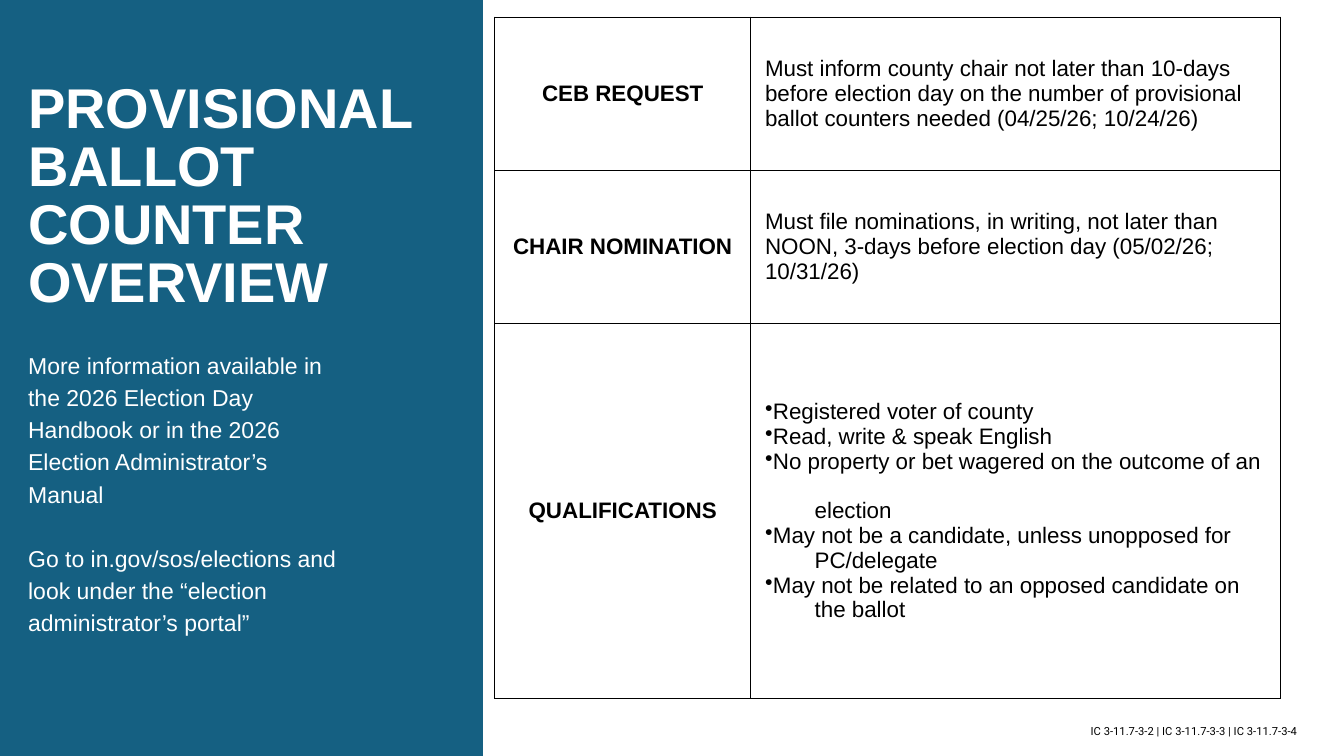
from lxml import etree
from pptx import Presentation
from pptx import util as u
from pptx.dml.color import RGBColor
from pptx.enum import shapes, text
from pptx.oxml.ns import qn

HUES = {"band": "156082", "light": "FFFFFF", "dark": "000000"}
LEFT, MID, RIGHT = text.PP_ALIGN.LEFT, text.PP_ALIGN.CENTER, text.PP_ALIGN.RIGHT

HEAD = {"size": u.Pt(40), "name": "Arial", "bold": True}
INFO = {"size": u.Pt(16.4), "name": "Arial"}
LABEL = {"size": u.Pt(16), "name": "Arial", "bold": True}
BODY = {"size": u.Pt(16), "name": "Arial", "bold": False}
CITE = {"size": u.Pt(8), "name": "Roboto"}

TITLE = ["PROVISIONAL", "BALLOT COUNTER OVERVIEW"]
NOTES = [
    "More information available in the 2026 Election Day Handbook or in the "
    "2026 Election Administrator’s Manual",
    "Go to in.gov/sos/elections and look under the “election administrator’s portal”",
]
# Each qualification: first line, then its indented second line and the gap above it
RULES = [
    ("Registered voter of county", None, 0),
    ("Read, write & speak English", None, 0),
    ("No property or bet wagered on the outcome of an", "election", 17.5),
    ("May not be a candidate, unless unopposed for", "PC/delegate", 0),
    ("May not be related to an opposed candidate on", "the ballot", 0),
]
ROWS = [
    ("CEB REQUEST", "Must inform county chair not later than 10-days before election day "
     "on the number of provisional ballot counters needed (04/25/26; 10/24/26)"),
    ("CHAIR NOMINATION", "Must file nominations, in writing, not later than NOON, "
     "3-days before election day (05/02/26; 10/31/26)"),
    ("QUALIFICATIONS", RULES),
]
WIDTHS = [6.45, 13.36]
HEIGHTS = [3.86, 3.86, 9.45]


def rgb(hue):
    return RGBColor.from_string(HUES[hue])


def write(para, words, style, hue, align=LEFT, **form):
    """Put one run in a paragraph and format both."""
    run = para.add_run()
    run.text = words
    for key, val in style.items():
        setattr(run.font, key, val)
    run.font.color.rgb = rgb(hue)
    para.alignment = align
    for key, val in form.items():
        setattr(para, key, val)


def next_para(frame, first):
    return frame.paragraphs[0] if first else frame.add_paragraph()


def add_band(slide, wide, high):
    band = slide.shapes.add_shape(shapes.MSO_SHAPE.RECTANGLE, 0, 0, wide, high)
    band.shadow.inherit = False
    band.fill.solid()
    band.fill.fore_color.rgb = rgb("band")
    band.line.fill.background()


def add_text(slide, box, lines, style, hue, inset=None, gap=0, **form):
    frame = slide.shapes.add_textbox(*map(u.Cm, box)).text_frame
    frame.word_wrap = True
    frame.auto_size = text.MSO_AUTO_SIZE.SHAPE_TO_FIT_TEXT
    if inset is not None:
        for side in ("left", "top", "right", "bottom"):
            setattr(frame, "margin_" + side, inset)
    for i, line in enumerate(lines):
        write(next_para(frame, i == 0), line, style, hue,
              space_before=u.Pt(gap if i else 0), **form)


def set_list(para, left, hang, mark=None):
    """Indent a paragraph and give it a bullet if there is a mark."""
    props = para._p.get_or_add_pPr()
    props.set("marL", str(left))
    props.set("indent", str(hang))
    if mark:
        etree.SubElement(props, qn("a:buChar")).set("char", mark)
    else:
        etree.SubElement(props, qn("a:buNone"))


def add_rules(frame, rules):
    for i, (line, rest, gap) in enumerate(rules):
        para = next_para(frame, i == 0)
        write(para, line, BODY, "dark")
        set_list(para, 0, -u.Cm(0.97), "•")
        if rest:
            para = frame.add_paragraph()
            write(para, rest, BODY, "dark", space_before=u.Pt(gap))
            set_list(para, u.Cm(1.25), 0)


def style_cell(cell):
    """Set margins, anchor, thin borders and a clear fill."""
    for side in ("left", "top", "right", "bottom"):
        setattr(cell, "margin_" + side, u.Cm(0.36))
    cell.vertical_anchor = text.MSO_ANCHOR.MIDDLE
    props = cell._tc.get_or_add_tcPr()
    for edge in ("a:lnL", "a:lnR", "a:lnT", "a:lnB"):
        line = etree.SubElement(props, qn(edge), w=str(u.Pt(0.75)))
        fill = etree.SubElement(line, qn("a:solidFill"))
        etree.SubElement(fill, qn("a:srgbClr"), val=HUES["dark"])
    cell.fill.background()


def add_grid(slide, left, top):
    size = map(u.Cm, (left, top, sum(WIDTHS), sum(HEIGHTS)))
    grid = slide.shapes.add_table(len(ROWS), len(WIDTHS), *size).table
    grid.first_row = grid.horz_banding = False
    for col, wide in zip(grid.columns, WIDTHS):
        col.width = u.Cm(wide)
    for row, high, (label, body) in zip(grid.rows, HEIGHTS, ROWS):
        row.height = u.Cm(high)
        name, fact = row.cells
        for cell in (name, fact):
            style_cell(cell)
        write(name.text_frame.paragraphs[0], label, LABEL, "dark", MID)
        if isinstance(body, str):
            write(fact.text_frame.paragraphs[0], body, BODY, "dark")
        else:
            add_rules(fact.text_frame, body)


def main():
    deck = Presentation()
    deck.slide_width, deck.slide_height = u.Cm(33.87), u.Cm(19.05)
    slide = deck.slides.add_slide(deck.slide_layouts[6])

    # Left panel
    add_band(slide, u.Cm(12.17), deck.slide_height)
    add_text(slide, (0.71, 2.06, 9.73, 5.99), TITLE, HEAD, "light",
             inset=0, line_spacing=u.Pt(41.5))
    add_text(slide, (0.71, 8.74, 7.77, 7.29), NOTES, INFO, "light",
             inset=0, gap=23, line_spacing=u.Pt(23))

    # Table and legal references
    add_grid(slide, 12.47, 0.43)
    add_text(slide, (22.99, 18.14, 9.96, 0.61),
             ["IC 3-11.7-3-2 | IC 3-11.7-3-3 | IC 3-11.7-3-4"], CITE, "dark", align=RIGHT)

    deck.save("out.pptx")


if __name__ == "__main__":
    main()
